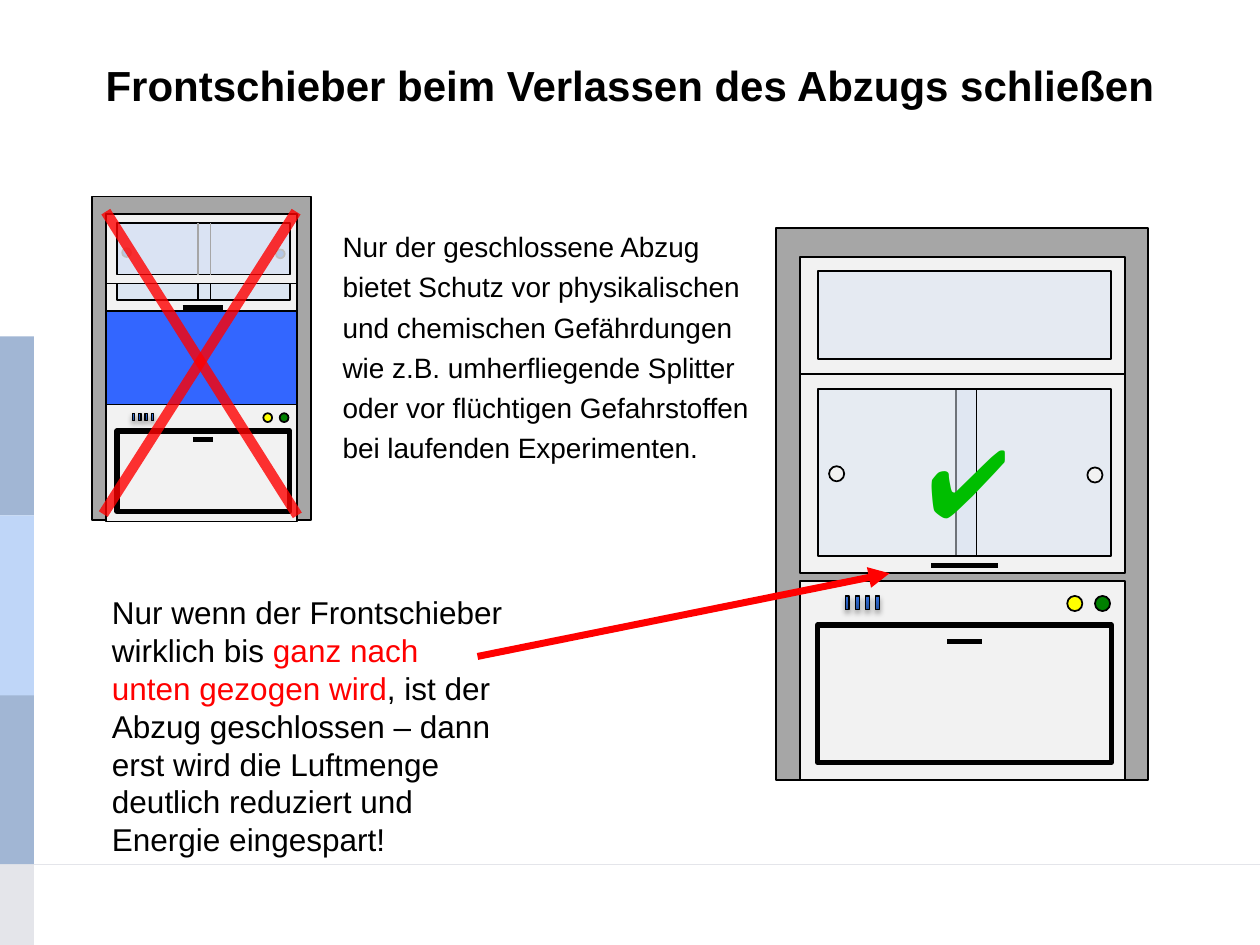
from copy import deepcopy
from lxml import etree
from pptx import Presentation
from pptx.dml.color import RGBColor
from pptx.enum.shapes import MSO_CONNECTOR, MSO_SHAPE
from pptx.enum.text import MSO_ANCHOR, PP_ALIGN
from pptx.oxml.ns import qn
from pptx.util import Inches, Pt

RECT, OVAL = MSO_SHAPE.RECTANGLE, MSO_SHAPE.OVAL
STRAIGHT = MSO_CONNECTOR.STRAIGHT
TOP = MSO_ANCHOR.TOP
LEFT, CENTER = PP_ALIGN.LEFT, PP_ALIGN.CENTER

COLORS = {
    "black": "000000", "frame": "A6A6A6", "panel": "F2F2F2",
    "glass": "DCE6F2", "pane": "DAE3F3", "opening": "3366FF",
    "green": "008000", "yellow": "FFFF00", "red": "FF0000", "check": "00BE00",
    "knob": "B4C7E7", "knob_edge": "BFBFBF",
    "band": "A1B6D4", "light_band": "BFD6F8", "footer": "E4E5EA",
    "led_dark": "2451A1", "led_mid": "2F69D1", "led_light": "2C69D5",
}
RGB = {name: RGBColor.from_string(value) for name, value in COLORS.items()}


def add_block(parent, kind, x, y, w, h, fill, edge="black", weight=1, alpha=100):
    block = parent.add_shape(kind, Inches(x), Inches(y), Inches(w), Inches(h))
    block.shadow.inherit = False
    block.fill.solid()
    block.fill.fore_color.rgb = RGB[fill]
    if alpha < 100:
        color = block.fill._xPr.find(qn("a:solidFill"))[0]
        etree.SubElement(color, qn("a:alpha"), val=str(alpha * 1000))
    if edge:
        block.line.color.rgb = RGB[edge]
        block.line.width = Pt(weight)
    else:
        block.line.fill.background()
    return block


def add_stroke(parent, x1, y1, x2, y2, color="black", weight=1, alpha=100):
    stroke = parent.add_connector(STRAIGHT, Inches(x1), Inches(y1), Inches(x2), Inches(y2))
    stroke.line.color.rgb = RGB[color]
    stroke.line.width = Pt(weight)
    properties = stroke._element.spPr
    if alpha < 100:
        solid = properties.find(qn("a:ln")).find(qn("a:solidFill"))
        etree.SubElement(solid[0], qn("a:alpha"), val=str(alpha * 1000))
    etree.SubElement(properties, qn("a:effectLst"))
    return stroke


prs = Presentation()
prs.slide_width, prs.slide_height = Inches(10), Inches(7.5)
slide = prs.slides.add_slide(prs.slide_layouts[6])
canvas = slide.shapes

add_stroke(canvas, 0, 6.86, 10, 6.86, "footer", 0.5)
for y, height, color in [
    (2.67, 1.42, "band"), (5.51, 1.35, "band"),
    (6.86, 0.64, "footer"), (4.09, 1.43, "light_band"),
]:
    add_block(canvas, RECT, 0, y, 0.27, height, color, None)

open_hood = canvas.add_group_shape().shapes
for part in [
    (RECT, 0.73, 1.56, 1.74, 2.57, "frame"),
    (RECT, 0.84, 3.21, 1.52, 0.93, "panel"),
    (RECT, 0.93, 3.42, 1.37, 0.64, "panel", "black", 3),
    (RECT, 0.84, 1.71, 1.52, 0.76, "panel"),
    (RECT, 0.93, 1.71, 0.74, 0.67, "glass"),
    (RECT, 1.57, 1.71, 0.73, 0.67, "glass"),
]:
    add_block(open_hood, *part)
add_stroke(open_hood, 1.45, 2.44, 1.77, 2.44, weight=3)
add_stroke(open_hood, 1.67, 1.71, 1.67, 2.39)
add_stroke(open_hood, 1.53, 3.49, 1.69, 3.49, weight=3)
for part in [
    (RECT, 0.84, 1.7, 1.52, 0.55, "panel"),
    (RECT, 0.93, 1.77, 1.37, 0.41, "pane"),
    (RECT, 0.84, 2.47, 1.52, 0.74, "opening"),
    (OVAL, 2.22, 3.28, 0.07, 0.07, "green"),
    (OVAL, 2.09, 3.28, 0.07, 0.07, "yellow"),
    (OVAL, 2.19, 1.98, 0.07, 0.07, "knob", "knob_edge"),
    (OVAL, 0.97, 1.97, 0.07, 0.07, "knob", "knob_edge"),
]:
    add_block(open_hood, *part)
for x in (1.57, 1.67):
    add_stroke(open_hood, x, 1.77, x, 2.18, "frame")

for part in [
    (RECT, 6.16, 1.81, 2.95, 4.38, "frame"),
    (RECT, 6.35, 2.95, 2.58, 1.6, "panel"),
    (RECT, 7.59, 3.09, 1.23, 1.32, "pane", "black", 1, 50),
    (RECT, 6.35, 4.61, 2.58, 1.58, "panel"),
    (RECT, 6.49, 4.96, 2.33, 1.09, "panel", "black", 3),
    (RECT, 6.49, 3.09, 1.26, 1.32, "glass", "black", 1, 50),
    (OVAL, 8.63, 3.71, 0.12, 0.12, "panel"),
    (OVAL, 6.58, 3.7, 0.12, 0.12, "panel"),
    (RECT, 6.35, 2.04, 2.58, 0.93, "panel"),
    (RECT, 6.49, 2.15, 2.33, 0.7, "pane", "black", 1, 50),
    (OVAL, 8.69, 4.73, 0.12, 0.12, "green"),
    (OVAL, 8.47, 4.73, 0.12, 0.12, "yellow"),
]:
    add_block(canvas, *part)
add_stroke(canvas, 7.39, 4.49, 7.92, 4.49, weight=3)
add_stroke(canvas, 7.52, 5.09, 7.79, 5.09, weight=3)
add_stroke(canvas, 7.75, 3.09, 7.75, 4.41)

for hood, left, top, width, height, step in [
    (open_hood, 1.05, 3.28, 0.02, 0.06, 0.05),
    (canvas, 6.71, 4.73, 0.03, 0.11, 0.08),
]:
    for number in range(4):
        led = add_block(hood, RECT, left + number * step, top, width, height, "led_dark", weight=0.75)
        led.fill.gradient()
        led.fill.gradient_angle = 90
        properties = led._element.spPr
        stop_list = properties.find(qn("a:gradFill")).find(qn("a:gsLst"))
        stop_list.append(deepcopy(stop_list[-1]))
        shades = [(0, "led_dark"), (0.8, "led_mid"), (1, "led_light")]
        for stop, (position, shade) in zip(led.fill.gradient_stops, shades):
            stop.position = position
            stop.color.rgb = RGB[shade]
        shadow = etree.SubElement(
            properties.find(qn("a:effectLst")), qn("a:outerShdw"),
            blurRad=str(Pt(3.1)), dist=str(Pt(1.8)), dir="5400000", rotWithShape="0")
        shadow_color = etree.SubElement(shadow, qn("a:srgbClr"), val=COLORS["black"])
        etree.SubElement(shadow_color, qn("a:alpha"), val="35000")

add_stroke(open_hood, 0.82, 4.08, 2.35, 1.68, "red", 6, 80)
add_stroke(open_hood, 2.36, 4.09, 0.84, 1.68, "red", 6, 80)

for x, y, width, height, size, bold, align, spacing, runs in [
    (0, 0.42, 10, 0.74, 24, True, CENTER, 1,
     [("Frontschieber beim Verlassen des Abzugs schließen", "black")]),
    (7.26, 3.31, 0.96, 1.01, 54, False, LEFT, 1, [("✔", "check")]),
    (2.62, 1.72, 3.55, 2.04, 16, False, LEFT, 1.2,
     [("Nur der geschlossene Abzug bietet Schutz vor physikalischen und chemischen "
       "Gefährdungen wie z.B. umherfliegende Splitter oder vor flüchtigen "
       "Gefahrstoffen bei laufenden Experimenten.", "black")]),
    (0.79, 4.66, 3.31, 2.22, 18, False, LEFT, 1,
     [("Nur wenn der Frontschieber wirklich bis ", "black"),
      ("ganz nach unten gezogen wird", "red"),
      (", ist der Abzug geschlossen – dann erst wird die Luftmenge deutlich "
       "reduziert und Energie eingespart!", "black")]),
]:
    frame = canvas.add_textbox(Inches(x), Inches(y), Inches(width), Inches(height)).text_frame
    frame.word_wrap = True
    frame.vertical_anchor = TOP
    paragraph = frame.paragraphs[0]
    paragraph.alignment = align
    paragraph.line_spacing = spacing
    for words, color in runs:
        run = paragraph.add_run()
        run.text = words
        run.font.name = "Arial"
        run.font.size = Pt(size)
        run.font.bold = bold
        run.font.color.rgb = RGB[color]

pointer = add_stroke(canvas, 3.79, 5.21, 7.06, 4.55, "red", 4)
etree.SubElement(pointer._element.spPr.find(qn("a:ln")), qn("a:tailEnd"), type="triangle")

prs.save("out.pptx")
